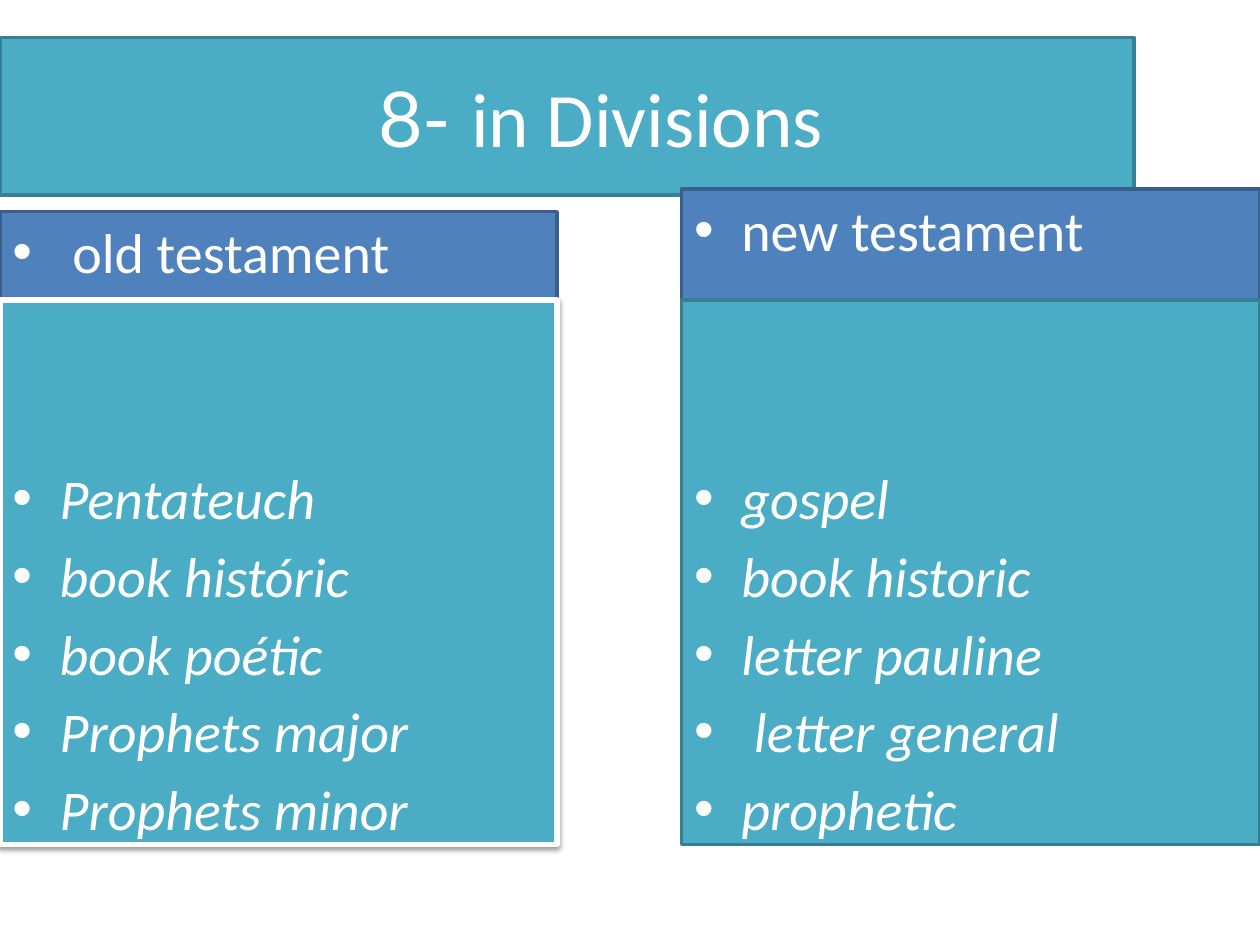
from lxml import etree
from pptx import Presentation
from pptx.dml.color import RGBColor
from pptx.enum.shapes import MSO_SHAPE
from pptx.enum.text import MSO_ANCHOR, MSO_AUTO_SIZE, PP_ALIGN
from pptx.oxml import parse_xml
from pptx.oxml.ns import nsdecls, qn
from pptx.util import Pt

RECT = MSO_SHAPE.RECTANGLE
TOP, MIDDLE = MSO_ANCHOR.TOP, MSO_ANCHOR.MIDDLE
LEFT, CENTER, JUSTIFY = PP_ALIGN.LEFT, PP_ALIGN.CENTER, PP_ALIGN.JUSTIFY
NO_FIT = MSO_AUTO_SIZE.NONE

COLORS = {
    "teal": "4BACC6",
    "teal_line": "377F92",
    "blue": "4F81BD",
    "blue_line": "3A5F8C",
    "white": "FFFFFF",
}
INDENT = 27
LIST_TOP, LIST_HEIGHT = 171.5, 311
LIST_INSET = 93.5

# left, width, heading top, heading, list line, list line width, shadow, items
COLUMNS = [
    (0, 318.25, 121, " old testament", "white", 3, True,
     ["Pentateuch", "book históric", "book poétic",
      "Prophets major", "Prophets minor"]),
    (389.5, 330.5, 108, "new testament", "teal_line", 2, False,
     ["gospel", "book historic", "letter pauline",
      " letter general", "prophetic"]),
]


def rgb(name):
    return RGBColor.from_string(COLORS[name])


def style_box(sp, fill, line, line_width=2):
    sp.fill.solid()
    sp.fill.fore_color.rgb = rgb(fill)
    sp.line.color.rgb = rgb(line)
    sp.line.width = Pt(line_width)


def style_font(font, size, name="Calibri", italic=False):
    font.name = name
    font.size = Pt(size)
    font.italic = italic
    font.color.rgb = rgb("white")


def set_bullet(p):
    pPr = p._p.get_or_add_pPr()
    pPr.set("marL", str(Pt(INDENT)))
    pPr.set("indent", str(-Pt(INDENT)))
    font = parse_xml(f'<a:buFont {nsdecls("a")} typeface="Arial"/>')
    char = parse_xml(f'<a:buChar {nsdecls("a")} char="•"/>')
    pPr.insert_element_before(font, "a:tabLst", "a:defRPr", "a:extLst")
    font.addnext(char)


def add_shadow(sp):
    effects = sp._element.spPr.find(qn("a:effectLst"))
    shadow = etree.SubElement(effects, qn("a:outerShdw"), blurRad=str(Pt(3.1)),
                              dist=str(Pt(1.6)), dir="5400000", rotWithShape="0")
    color = etree.SubElement(shadow, qn("a:srgbClr"), val="000000")
    etree.SubElement(color, qn("a:alpha"), val="38000")


def add_title(s):
    sp = s.shapes.title
    sp.left, sp.top, sp.width, sp.height = Pt(0), Pt(21.5), Pt(648), Pt(90)
    style_box(sp, "teal", "teal_line")
    tf = sp.text_frame
    tf.auto_size = NO_FIT
    tf.vertical_anchor = MIDDLE
    tf.margin_left = Pt(46)
    p = tf.paragraphs[0]
    p.alignment = CENTER
    for text, name in (("8- ", "Lato"), ("in Divisions", "Calibri")):
        r = p.add_run()
        r.text = text
        style_font(r.font, 44, name)


def add_bullet_box(s, box, items, fill, line, line_width=2,
                   inset=3.6, align=LEFT, italic=False):
    sp = s.shapes.add_shape(RECT, *[Pt(v) for v in box])
    sp.shadow.inherit = False
    style_box(sp, fill, line, line_width)
    tf = sp.text_frame
    tf.word_wrap = True
    tf.vertical_anchor = TOP
    tf.margin_top, tf.margin_bottom = Pt(inset), Pt(0)
    for i, item in enumerate(items):
        p = tf.add_paragraph() if i else tf.paragraphs[0]
        p.text = item
        p.alignment = align
        p.space_before = Pt(6 if i else 0)
        style_font(p.font, 32, italic=italic)
        set_bullet(p)
    return sp


def main():
    prs = Presentation()
    prs.slide_width, prs.slide_height = Pt(720), Pt(540)
    s = prs.slides.add_slide(prs.slide_layouts[5])
    add_title(s)
    for left, width, top, heading, line, line_width, shadow, items in COLUMNS:
        add_bullet_box(s, (left, top, width, LIST_TOP - top), [heading],
                       "blue", "blue_line")
        sp = add_bullet_box(s, (left, LIST_TOP, width, LIST_HEIGHT), items,
                            "teal", line, line_width, LIST_INSET, JUSTIFY, True)
        if shadow:
            add_shadow(sp)
    prs.save("out.pptx")


if __name__ == "__main__":
    main()
